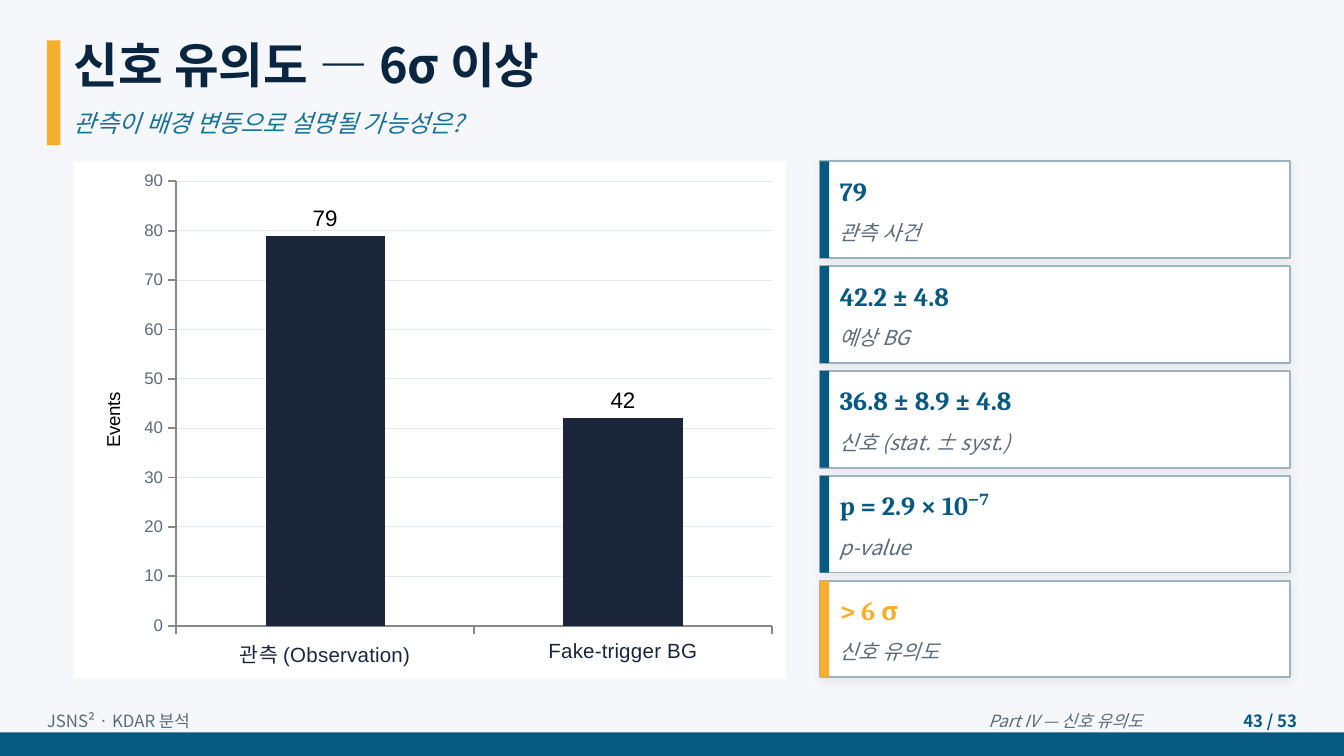
from lxml.etree import SubElement as Sub
from pptx import Presentation
from pptx.chart.data import CategoryChartData as Data
from pptx.dml.color import RGBColor as RGB
from pptx.enum.chart import XL_CHART_TYPE as Kind, XL_LABEL_POSITION as Spot
from pptx.enum.chart import XL_TICK_LABEL_POSITION as Tick, XL_TICK_MARK as Mark
from pptx.enum.shapes import MSO_SHAPE as Form
from pptx.enum.text import MSO_ANCHOR as Anchor, PP_ALIGN as Align
from pptx.oxml.ns import qn
from pptx.util import Inches, Pt

W = 10
H = W * 9 / 16
SANS, SERIF, PLAIN = "Noto Sans CJK KR", "Cambria", "Arial"
HUE = {
    "back": "F5F7FA", "white": "FFFFFF", "black": "000000", "ink": "0A2540",
    "navy": "1B263B", "blue": "065A82", "teal": "1C7293", "gold": "F6AE2D",
    "gray": "5C6B7A", "edge": "9EB3C2", "axis": "888888", "grid": "E2E8F0",
}

TITLE = "신호 유의도 — 6σ 이상"
LEAD = "관측이 배경 변동으로 설명될 가능성은?"
BARS = [("관측 (Observation)", 79), ("Fake-trigger BG", 42)]
CARDS = [
    ("79", "관측 사건", "blue"),
    ("42.2 ± 4.8", "예상 BG", "blue"),
    ("36.8 ± 8.9 ± 4.8", "신호 (stat. ± syst.)", "blue"),
    ("p = 2.9 × 10⁻⁷", "p-value", "blue"),
    ("> 6 σ", "신호 유의도", "gold"),
]
FOOT = [
    ("JSNS² · KDAR 분석", 0.35, 5, {}),
    ("Part IV — 신호 유의도", 5, 3.5, {"italic": True, "align": Align.RIGHT}),
    ("43 / 53", 8.6, 1.05, {"bold": True, "hue": "blue", "align": Align.RIGHT}),
]

EDGE, LEFT, TOP = 0.35, 0.55, 1.2
CARD_X, CARD_W, CARD_H, STEP = 6.1, 3.5, 0.72, 0.78
BAND_Y, FOOT_H = 5.45, 0.18


def color(name):
    return RGB.from_string(HUE[name])


def place(*box):
    return [Inches(v) for v in box]


def style(font, size, hue, face=PLAIN):
    font.size, font.name = Pt(size), face
    font.color.rgb = color(hue)


def text(words, *box, size=9, hue="gray", face=SANS, bold=False,
         italic=False, align=Align.LEFT):
    frame = slide.shapes.add_textbox(*place(*box)).text_frame
    frame.word_wrap = True
    frame.vertical_anchor = Anchor.MIDDLE
    frame.margin_left = frame.margin_right = 0
    frame.margin_top = frame.margin_bottom = 0
    para = frame.paragraphs[0]
    para.alignment = align
    run = para.add_run()
    run.text = words
    style(run.font, size, hue, face)
    run.font.bold, run.font.italic = bold, italic
    Sub(run.font._element, qn("a:ea"), typeface=face)


def rect(fill, *box, line=None):
    shape = slide.shapes.add_shape(Form.RECTANGLE, *place(*box))
    shape.shadow.inherit = False
    shape.fill.solid()
    shape.fill.fore_color.rgb = color(fill)
    if line:
        shape.line.color.rgb = color(line)
        shape.line.width = Pt(1)
    else:
        shape.line.fill.background()
    return shape


def shade(shape):
    """Give the shape a faint shadow straight below it."""
    effects = shape._element.spPr.find(qn("a:effectLst"))
    drop = Sub(effects, qn("a:outerShdw"), blurRad=str(Pt(5)), dist=str(Pt(1.5)),
               dir=str(90 * 60000), algn="ctr", rotWithShape="0")
    tone = Sub(drop, qn("a:srgbClr"), val=HUE["black"])
    Sub(tone, qn("a:alpha"), val="6000")


def card(row, value, label, hue):
    y = TOP + row * STEP
    shade(rect("white", CARD_X, y, CARD_W, CARD_H, line="edge"))
    rect(hue, CARD_X, y, 0.07, CARD_H)
    x, wide = CARD_X + 0.15, CARD_W - 0.2
    text(value, x, y + 0.06, wide, 0.32, size=14, hue=hue, face=SERIF, bold=True)
    text(label, x, y + 0.38, wide, 0.3, size=11, italic=True)


def graph():
    data = Data()
    data.categories = [name for name, _ in BARS]
    data.add_series("Series 1", [count for _, count in BARS])
    chart = slide.shapes.add_chart(
        Kind.COLUMN_CLUSTERED, *place(LEFT, TOP, 5.3, 3.85), data).chart
    style(chart.font, 10, "black", "Calibri")
    chart.has_legend = chart.has_title = False

    # The chart's own fill goes ahead of its text settings.
    back = chart._chartSpace.makeelement(qn("c:spPr"), {})
    Sub(Sub(back, qn("a:solidFill")), qn("a:srgbClr"), val=HUE["white"])
    Sub(Sub(back, qn("a:ln")), qn("a:noFill"))
    chart._chartSpace.find(qn("c:txPr")).addprevious(back)

    cat, val = chart.category_axis, chart.value_axis
    for axis, size, hue in ((cat, 11, "navy"), (val, 9, "gray")):
        style(axis.tick_labels.font, size, hue)
        axis.major_tick_mark, axis.minor_tick_mark = Mark.OUTSIDE, Mark.NONE
        axis.format.line.color.rgb = color("axis")
        axis.format.line.width = Pt(1)
    cat.tick_label_position = Tick.LOW
    cat.has_major_gridlines = False
    val.minimum_scale, val.maximum_scale, val.major_unit = 0, 90, 10
    val.has_major_gridlines = True
    val.major_gridlines.format.line.color.rgb = color("grid")
    val.major_gridlines.format.line.width = Pt(0.5)
    head = val.axis_title.text_frame
    head.text = "Events"
    font = head.paragraphs[0].runs[0].font
    style(font, 10, "black")
    font.bold = False

    plot = chart.plots[0]
    plot.gap_width, plot.vary_by_categories = 150, False
    bars = plot.series[0]
    bars.format.fill.solid()
    bars.format.fill.fore_color.rgb = color("navy")
    tags = bars.data_labels
    tags.show_value = True
    tags.number_format, tags.number_format_is_linked = "#,##0", False
    tags.position = Spot.OUTSIDE_END
    style(tags.font, 12, "black")


deck = Presentation()
deck.slide_width, deck.slide_height = place(W, H)
slide = deck.slides.add_slide(deck.slide_layouts[6])
slide.background.fill.solid()
slide.background.fill.fore_color.rgb = color("back")

rect("gold", EDGE, 0.3, 0.1, 0.78)
text(TITLE, LEFT, 0.22, 9.1, 0.52, size=26, hue="ink", bold=True)
text(LEAD, LEFT, 0.74, 9.1, 0.34, size=13, hue="teal", italic=True)
graph()
for row, item in enumerate(CARDS):
    card(row, *item)
rect("blue", 0, BAND_Y, W, H - BAND_Y)
for words, x, wide, look in FOOT:
    text(words, x, BAND_Y - FOOT_H, wide, FOOT_H, **look)
deck.save("out.pptx")
